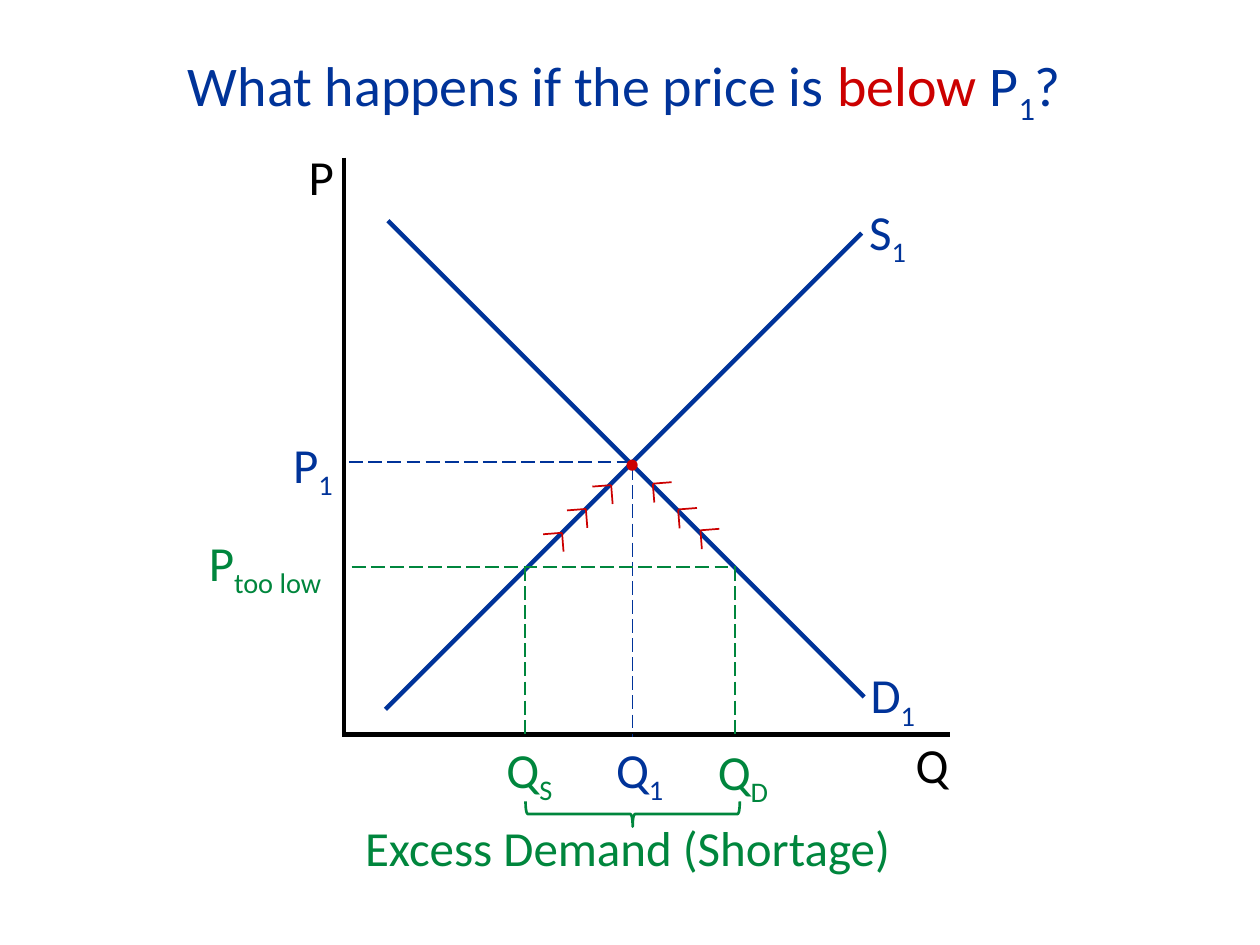
from lxml import etree
from pptx import Presentation
from pptx.dml.color import RGBColor
from pptx.enum.dml import MSO_LINE
from pptx.enum.shapes import MSO_CONNECTOR, MSO_SHAPE
from pptx.enum.text import MSO_ANCHOR, MSO_AUTO_SIZE, PP_ALIGN
from pptx.oxml.ns import qn
from pptx.util import Cm, Pt

STRAIGHT = MSO_CONNECTOR.STRAIGHT
DASH = MSO_LINE.LONG_DASH
BRACE = MSO_SHAPE.LEFT_BRACE
MIDDLE = MSO_ANCHOR.MIDDLE
GROW, FIXED = MSO_AUTO_SIZE.SHAPE_TO_FIT_TEXT, MSO_AUTO_SIZE.NONE
CENTER = PP_ALIGN.CENTER
BLUE, GREEN, RED, BLACK = "003399", "00863D", "CC0000", "000000"


def add_run(par, text, color, size=28, sub=False):
    run = par.add_run()
    run.text = text
    for name, value in {"name": "Calibri", "size": Pt(size)}.items():
        setattr(run.font, name, value)
    run.font.color.rgb = RGBColor.from_string(color)
    if sub:
        run._r.get_or_add_rPr().set("baseline", "-25000")


def add_line(ends, color, width, dash=None):
    line = slide.shapes.add_connector(STRAIGHT, *[Cm(v) for v in ends])
    line.line.color.rgb = RGBColor.from_string(color)
    line.line.width = Pt(width)
    if dash:
        line.line.dash_style = dash
    etree.SubElement(line._element.spPr, qn("a:effectLst"))


deck = Presentation()
deck.slide_width, deck.slide_height = Cm(25.4), Cm(19.05)
slide = deck.slides.add_slide(deck.slide_layouts[5])

# Title
title = slide.shapes.title
place = {"left": 1.78, "top": 0.97, "width": 21.84, "height": 1.63}
for name, value in place.items():
    setattr(title, name, Cm(value))
frame = title.text_frame
for name, value in {"vertical_anchor": MIDDLE, "auto_size": FIXED,
                    "word_wrap": True}.items():
    setattr(frame, name, value)
par = frame.paragraphs[0]
par.alignment = CENTER
add_run(par, "What happens if the price is ", BLUE, 32)
add_run(par, "below", RED, 32)
add_run(par, " P", BLUE, 32)
add_run(par, "1", BLUE, 32, sub=True)
add_run(par, "?", BLUE, 32)
add_run(par, " ", BLUE)

# Curves and axes
base = 14.86
low = 11.43
for ends, color in [
    ((7.77, 14.3, 17.37, 4.7), BLUE),
    ((7.82, 4.45, 17.42, 14.05), BLUE),
    ((6.93, 3.18, 6.93, base), BLACK),
    ((6.96, 14.81, 19.15, 14.81), BLACK),
]:
    add_line(ends, color, 2.5)

# Price and quantity guides
for ends, color in [
    ((7.04, 9.32, 12.7, 9.32), BLUE),
    ((12.75, 9.4, 12.75, base), BLUE),
    ((7.09, low, 14.83, low), GREEN),
    ((10.59, low, 10.59, base), GREEN),
    ((14.81, low, 14.81, base), GREEN),
]:
    add_line(ends, color, 1, DASH)

# Arrows along the curves towards equilibrium
tips = {-1: [(12.32, 9.78), (11.81, 10.26), (11.33, 10.74)],
        1: [(13.16, 9.75), (13.67, 10.27), (14.12, 10.69)]}
for side, points in tips.items():
    for x, y in points:
        add_line((x, y, x + 0.03, y + 0.38), RED, 1)
        add_line((x, y, x + side * 0.38, y - side * 0.03), RED, 1)

# Brace over the shortage
brace = slide.shapes.add_shape(BRACE, Cm(12.5), Cm(14.25), Cm(0.51), Cm(4.32))
brace.rotation = 270
brace.shadow.inherit = False
brace.fill.background()
brace.line.color.rgb = RGBColor.from_string(GREEN)
brace.line.width = Pt(1.5)

# Labels: text, subscript, colour, size, line spacing, box
for text, sub, color, size, space, box in [
    ("P", "", BLACK, 28, 0.8, (5.97, 3.05, 1.14, 1.24)),
    ("Q", "", BLACK, 28, 1, (18.21, 14.68, 1.3, 1.45)),
    ("S", "1", BLUE, 28, 1, (17.27, 3.94, 1.47, 1.45)),
    ("D", "1", BLUE, 28, 1, (17.3, 13.28, 1.47, 1.45)),
    ("P", "1", BLUE, 28, 0.8, (5.66, 8.76, 1.47, 1.24)),
    ("Q", "1", BLUE, 28, 0.8, (12.17, 14.91, 1.9, 1.22)),
    ("P", "too low", GREEN, 28, 0.8, (3.96, 10.74, 3.38, 1.22)),
    ("Q", "S", GREEN, 28, 0.8, (9.96, 14.91, 1.9, 1.24)),
    ("Q", "D", GREEN, 28, 0.8, (14.22, 14.94, 1.9, 1.24)),
    ("Excess Demand (Shortage)", "", GREEN, 28, 1, (7.11, 16.36, 11.13, 1.45)),
    ("•", "", RED, 18, 1, (12.34, 8.81, 1.37, 1.02)),
]:
    frame = slide.shapes.add_textbox(*[Cm(v) for v in box]).text_frame
    for name, value in {"word_wrap": True, "auto_size": GROW}.items():
        setattr(frame, name, value)
    par = frame.paragraphs[0]
    par.line_spacing = float(space)
    add_run(par, text, color, size)
    if sub:
        add_run(par, sub, color, size, sub=True)

deck.save("out.pptx")
